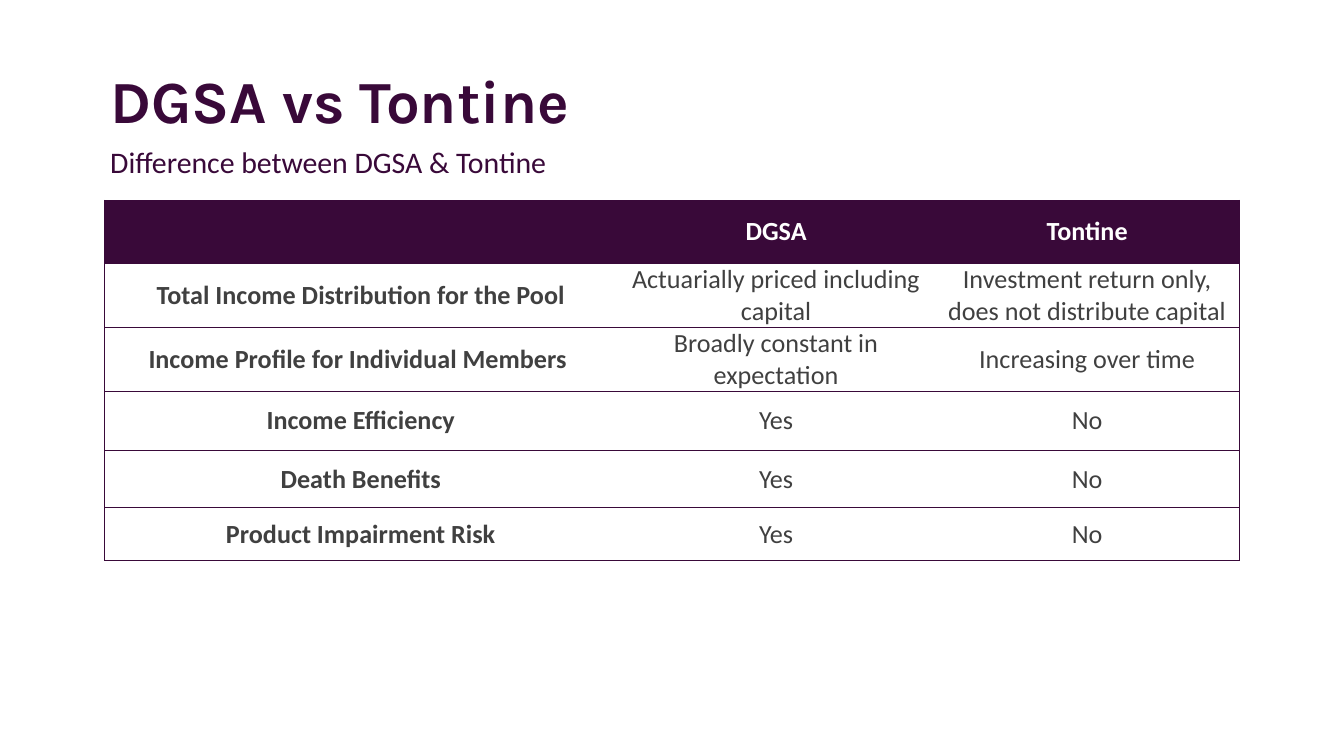
from dataclasses import dataclass

from lxml import etree
from pptx import Presentation
from pptx.dml.color import RGBColor
from pptx.enum.text import MSO_ANCHOR, PP_ALIGN
from pptx.oxml.ns import qn
from pptx.util import Inches, Pt

MIDDLE, BOTTOM, TOP = MSO_ANCHOR.MIDDLE, MSO_ANCHOR.BOTTOM, MSO_ANCHOR.TOP
CENTER = PP_ALIGN.CENTER
COLOURS = {"plum": "390939", "white": "FFFFFF", "grey": "404040"}
WIDTH = 10
HEIGHT = WIDTH * 9 / 16
LEFT = 0.078 * WIDTH
COLUMNS = (3.81, 2.37, 2.26)
BORDER = Pt(0.5)


@dataclass
class Style:
    font: str
    size: int
    colour: str
    bold: bool = False


@dataclass
class Heading:
    text: str
    top: float
    height: float
    style: Style
    anchor: MSO_ANCHOR
    insets: tuple[float, float, float, float]
    line_spacing: float = 1.0


@dataclass
class Row:
    height: float
    label: str
    dgsa: str
    tontine: str


HEADINGS = (
    Heading("Difference between DGSA & Tontine", 0.19, 0.105,
            Style("Calibri", 16, "plum"), TOP, (0.04, 0, 0.04, 0.04)),
    Heading("DGSA vs Tontine", 0.036, 0.151,
            Style("Karla", 32, "plum", True), BOTTOM, (0.04, 0.05, 0.1, 0.05), 0.75),
)
ROWS = (
    Row(0.47, "", "DGSA", "Tontine"),
    Row(0.48, "Total Income Distribution for the Pool",
        "Actuarially priced including capital",
        "Investment return only, does not distribute capital"),
    Row(0.47, "Income Profile for Individual Members ",
        "Broadly constant in expectation", "Increasing over time"),
    Row(0.44, "Income Efficiency", "Yes", "No"),
    Row(0.43, "Death Benefits", "Yes", "No"),
    Row(0.39, "Product Impairment Risk", "Yes", "No"),
)


def add_span(para, text: str, style: Style) -> None:
    """Add one styled run to a paragraph."""
    span = para.add_run()
    span.text = text
    span.font.name = style.font
    span.font.size = Pt(style.size)
    span.font.bold = style.bold
    span.font.color.rgb = RGBColor.from_string(COLOURS[style.colour])


def set_insets(target, insets: tuple[float, float, float, float]) -> None:
    """Set the left, top, right and bottom margins of a frame or cell."""
    for side, inset in zip(("left", "top", "right", "bottom"), insets):
        setattr(target, f"margin_{side}", Inches(inset))


def add_heading(page, heading: Heading) -> None:
    """Draw one heading across the page."""
    box = page.shapes.add_textbox(Inches(LEFT), Inches(heading.top * HEIGHT),
                                  Inches(0.871 * WIDTH), Inches(heading.height * HEIGHT))
    frame = box.text_frame
    frame.word_wrap = True
    frame.vertical_anchor = heading.anchor
    set_insets(frame, heading.insets)
    para = frame.paragraphs[0]
    para.line_spacing = heading.line_spacing
    add_span(para, heading.text, heading.style)


def add_borders(cell, column: int) -> None:
    """Rule a cell above and below, and at the table's outer sides."""
    ruled = {"lnL": column == 0, "lnR": column == len(COLUMNS) - 1,
             "lnT": True, "lnB": True}
    properties = cell._tc.get_or_add_tcPr()
    for tag, visible in ruled.items():
        line = etree.SubElement(properties, qn(f"a:{tag}"), w=str(int(BORDER)))
        if visible:
            fill = etree.SubElement(line, qn("a:solidFill"))
            etree.SubElement(fill, qn("a:srgbClr"), val=COLOURS["plum"])
        else:
            etree.SubElement(line, qn("a:noFill"))


def fill_cell(cell, text: str, row: int, column: int) -> None:
    """Style a cell and write its text."""
    header = row == 0
    add_borders(cell, column)
    cell.fill.solid()
    cell.fill.fore_color.rgb = RGBColor.from_string(COLOURS["plum" if header else "white"])
    cell.vertical_anchor = MIDDLE
    set_insets(cell, (0.07, 0, 0.07, 0))
    para = cell.text_frame.paragraphs[0]
    para.alignment = CENTER
    if text:
        bold = header or column == 0
        add_span(para, text, Style("Calibri", 14, "white" if header else "grey", bold))


def add_comparison(page) -> None:
    """Draw the comparison table."""
    frame = page.shapes.add_table(len(ROWS), len(COLUMNS), Inches(LEFT), Inches(1.49),
                                  Inches(sum(COLUMNS)), Inches(sum(row.height for row in ROWS)))
    table = frame.table
    table.horz_banding = False
    for column, width in enumerate(COLUMNS):
        table.columns[column].width = Inches(width)
    for index, row in enumerate(ROWS):
        table.rows[index].height = Inches(row.height)
        for column, text in enumerate((row.label, row.dgsa, row.tontine)):
            fill_cell(table.cell(index, column), text, index, column)


def main() -> None:
    """Build and save the deck."""
    deck = Presentation()
    deck.slide_width, deck.slide_height = Inches(WIDTH), Inches(HEIGHT)
    page = deck.slides.add_slide(deck.slide_layouts[6])
    for heading in HEADINGS:
        add_heading(page, heading)
    add_comparison(page)
    deck.save("out.pptx")


if __name__ == "__main__":
    main()
